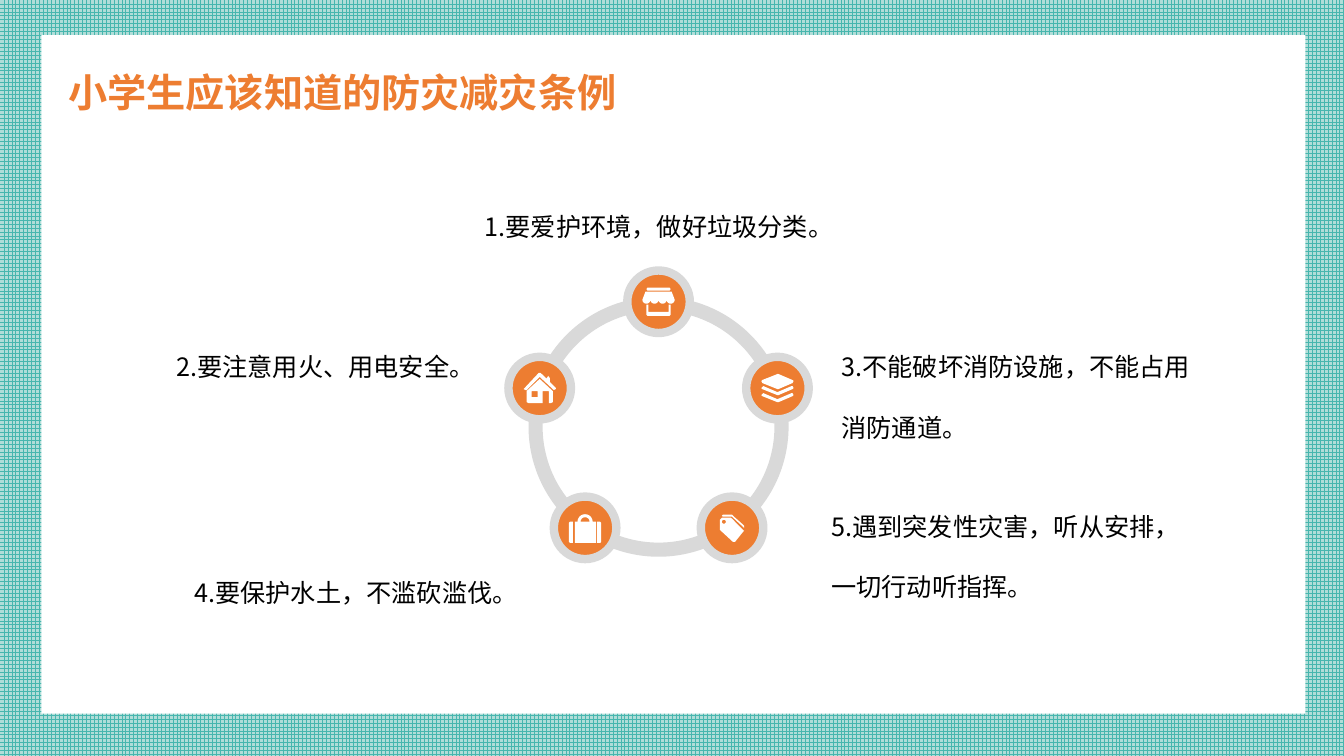
from dataclasses import dataclass
from math import cos, radians, sin

from lxml import etree
from pptx import Presentation
from pptx.dml.color import RGBColor
from pptx.enum.dml import MSO_PATTERN
from pptx.enum.shapes import MSO_SHAPE
from pptx.enum.text import MSO_AUTO_SIZE
from pptx.oxml.ns import qn
from pptx.shapes.autoshape import Shape
from pptx.slide import Slide
from pptx.util import Emu, Pt

RECT = MSO_SHAPE.RECTANGLE
OVAL = MSO_SHAPE.OVAL
DONUT = MSO_SHAPE.DONUT
GRID = MSO_PATTERN.LARGE_GRID
GROW = MSO_AUTO_SIZE.SHAPE_TO_FIT_TEXT

TEAL = RGBColor(0x47, 0xB6, 0xAE)
MINT = RGBColor(0xB1, 0xDD, 0xD8)
ORANGE = RGBColor(0xED, 0x7D, 0x31)
GREY = RGBColor(0xD9, 0xD9, 0xD9)
WHITE = RGBColor(0xFF, 0xFF, 0xFF)
BLACK = RGBColor(0x00, 0x00, 0x00)

FONT = "Noto Sans CJK SC"
COLS, ROWS = 160, 90
CELL = 76200
DOT = 9144
HUB = (78.4, 50.8)
RING = 30.96
BAND = 1.68
ORBIT = 14.88
NODE = 7.44

Point = tuple[float, float]
Path = list[Point]


@dataclass(frozen=True)
class Box:
    col: float
    row: float
    wide: float
    high: float

    def emu(self) -> tuple[Emu, Emu, Emu, Emu]:
        left, top, width, height = (
            Emu(round(n * CELL)) for n in (self.col, self.row, self.wide, self.high)
        )
        return left, top, width, height


@dataclass(frozen=True)
class Label:
    text: str
    box: Box
    wrap: bool = True
    size: int = 18
    color: RGBColor = BLACK
    bold: bool = False
    space: float = 2.0


@dataclass(frozen=True)
class Icon:
    paths: list[Path]


def arc(x: float, y: float, size: float, start: int, stop: int) -> Path:
    turns = (radians(a) for a in range(start, stop + 1, 15))
    return [(x + size * cos(t), y + size * sin(t)) for t in turns]


def shift(path: Path, down: float) -> Path:
    return [(x, y + down) for x, y in path]


def flip(path: Path) -> Path:
    return [(-x, y) for x, y in path]


SLAB: Path = [(-15, -8), (0, -14), (1, -14), (15, -8), (16, -7), (15, -5),
              (1, 1), (0, 1), (-15, -5), (-16, -7)]
FOLD: Path = [(-14, -2), (0, 4), (14, -2), (15, -2), (16, 0), (15, 1),
              (1, 7), (0, 7), (-15, 1), (-16, 0)]
AWNING: Path = [(-13, -10), (13, -10)]
for mid in (12, 4, -4, -12):
    AWNING += arc(mid, -2, 4, 0, 180)
SIGN: Path = [(-11, -11), (-12, -12.5), (-11, -14), (11, -14), (12, -12.5), (11, -11)]
STALL: Path = [(-12, 3), (-10, 3), (-10, 10), (10, 10), (10, 3), (12, 3),
               (12, 13), (11, 14), (-11, 14), (-12, 13)]
BACK: Path = [(12, 0), (0, -11), (-9, -11), (-10, -12), (-9, -13), (0, -13),
              (1, -12), (10, -4), (12, -2)]
FRONT: Path = [(-1, -10), (0, -9), (11, 2), (12, 3), (11, 4), (3, 14), (1, 14),
               (-12, 2), (-12, -8), (-10, -10)]
SIDE: Path = [(12, -6), (15, -6), (16, -5), (16, 14), (15, 15), (12, 15)]
TRUNK: Path = [(-10, 15), (-10, -6), *arc(0, -6, 7.5, 180, 360), (11, -6), (11, 15)]
ROOF: Path = [(16, 1), (14, 2), (0, -11), (-13, 2), (-14, 2), (-16, 1), (-15, 0),
              (-1, -15), (1, -15), (7, -9), (7, -10), (8.5, -12), (10, -10),
              (10, -6), (16, 0)]
WALLS: Path = [(13, 3), (13, 14), (11, 15), (9, 15), (9, 3), (3, 3), (3, 15),
               (-11, 15), (-13, 14), (-13, 3), (0, -9)]
PANE: Path = [(-2, 3), (-8, 3), (-8, 9), (-2, 9)]

ICONS = [
    Icon([AWNING, SIGN, STALL]),
    Icon([SLAB, FOLD, shift(FOLD, 7)]),
    Icon([BACK, FRONT, arc(-8, -6, 2, 0, 360)]),
    Icon([SIDE, flip(SIDE), TRUNK, arc(0, -6, 4.5, 180, 360)]),
    Icon([ROOF, WALLS, PANE]),
]

LABELS = [
    Label("小学生应该知道的防灾减灾条例", Box(6.96, 4.68, 101.16, 8.64),
          size=28, color=ORANGE, bold=True, space=1.5),
    Label("1.要爱护环境，做好垃圾分类。", Box(56.52, 21, 44.28, 7.44), wrap=False),
    Label("2.要注意用火、用电安全。", Box(19.8, 37.68, 38.28, 7.44), wrap=False),
    Label("3.不能破坏消防设施，不能占用消防通道。", Box(99, 37.68, 46.2, 14.64)),
    Label("4.要保护水土，不滥砍滥伐。", Box(21.96, 64.56, 41.28, 7.44), wrap=False),
    Label("5.遇到突发性灾害，听从安排，一切行动听指挥。", Box(97.8, 56.64, 44.04, 14.64)),
]


def paint(shape: Shape, color: RGBColor) -> None:
    shape.shadow.inherit = False
    shape.fill.solid()
    shape.fill.fore_color.rgb = color
    shape.line.fill.background()


def put(slide: Slide, kind: MSO_SHAPE, box: Box, color: RGBColor) -> Shape:
    shape = slide.shapes.add_shape(kind, *box.emu())
    paint(shape, color)
    return shape


def disc(slide: Slide, kind: MSO_SHAPE, mid: Point, size: float, color: RGBColor) -> Shape:
    return put(slide, kind, Box(mid[0] - size / 2, mid[1] - size / 2, size, size), color)


def draw(slide: Slide, icon: Icon, mid: Point) -> None:
    paths = [
        [(round(mid[0] * CELL + x * DOT), round(mid[1] * CELL + y * DOT)) for x, y in path]
        for path in icon.paths
    ]
    pen = slide.shapes.build_freeform(*paths[0][0], scale=1.0)
    for path in paths:
        pen.move_to(*path[0])
        pen.add_line_segments(path[1:], close=True)
    paint(pen.convert_to_shape(), WHITE)


def node(slide: Slide, icon: Icon, turn: float) -> None:
    angle = radians(turn)
    mid = (HUB[0] + ORBIT * sin(angle), HUB[1] - ORBIT * cos(angle))
    shape = disc(slide, OVAL, mid, NODE, ORANGE)
    shape.line.color.rgb = GREY
    shape.line.width = Pt(6)
    draw(slide, icon, mid)


def write(slide: Slide, label: Label) -> None:
    frame = slide.shapes.add_textbox(*label.box.emu()).text_frame
    frame.word_wrap = label.wrap
    frame.auto_size = GROW
    para = frame.paragraphs[0]
    para.line_spacing = label.space
    run = para.add_run()
    run.text = label.text
    font = run.font
    font.name = FONT
    font.size = Pt(label.size)
    font.bold = label.bold
    font.color.rgb = label.color
    etree.SubElement(run._r.get_or_add_rPr(), qn("a:ea")).set("typeface", FONT)


def main() -> None:
    deck = Presentation()
    deck.slide_width = Emu(COLS * CELL)
    deck.slide_height = Emu(ROWS * CELL)
    slide = deck.slides.add_slide(deck.slide_layouts[6])
    back = slide.background.fill
    back.patterned()
    back.pattern = GRID
    back.fore_color.rgb = TEAL
    back.back_color.rgb = MINT
    put(slide, RECT, Box(4.92, 4.2, 150.48, 80.76), WHITE)
    ring = disc(slide, DONUT, HUB, RING, GREY)
    ring.adjustments[0] = BAND / RING
    for step, icon in enumerate(ICONS):
        node(slide, icon, step * 360 / len(ICONS))
    for label in LABELS:
        write(slide, label)
    deck.save("out.pptx")


if __name__ == "__main__":
    main()
